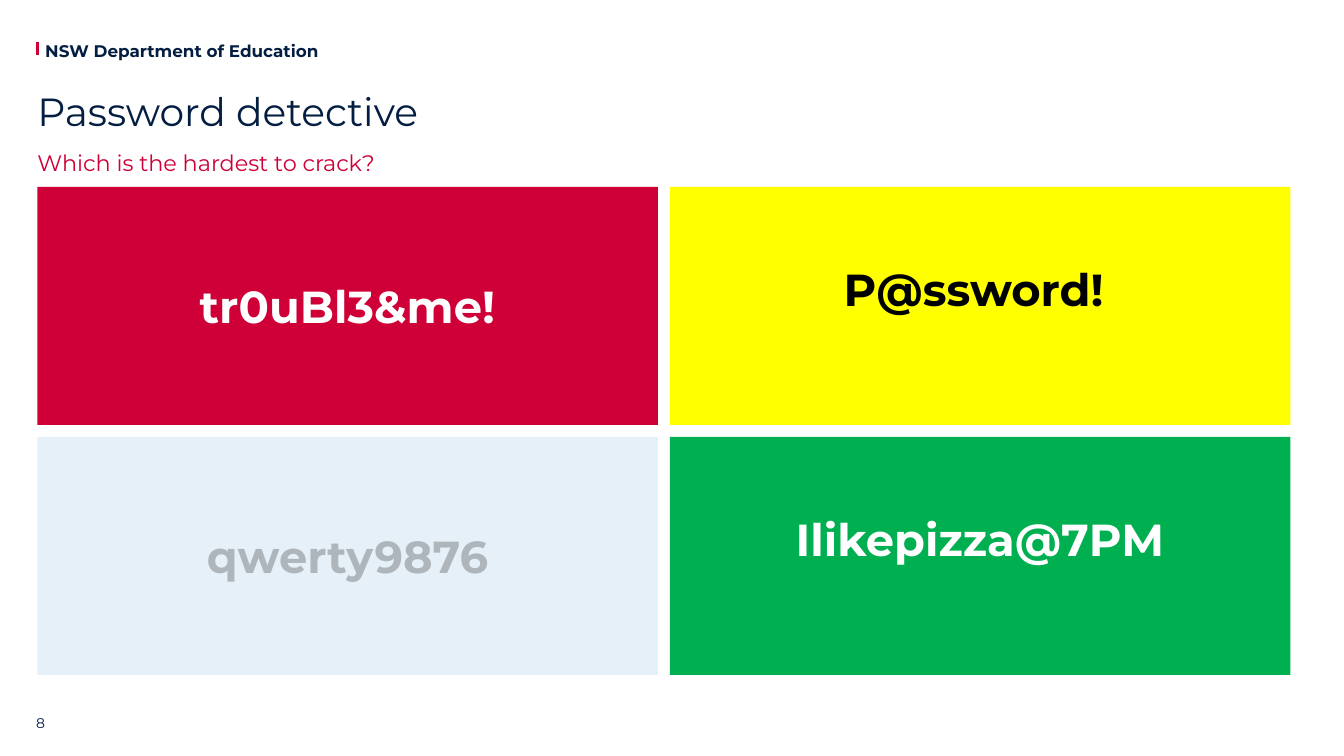
from lxml import etree
from pptx import Presentation
from pptx.dml.color import RGBColor
from pptx.enum.shapes import MSO_CONNECTOR, MSO_SHAPE
from pptx.enum.text import MSO_ANCHOR, PP_ALIGN
from pptx.oxml.ns import qn
from pptx.util import Cm, Pt

TOP, MIDDLE, BOTTOM = MSO_ANCHOR.TOP, MSO_ANCHOR.MIDDLE, MSO_ANCHOR.BOTTOM
CENTER = PP_ALIGN.CENTER
RECTANGLE, STRAIGHT = MSO_SHAPE.RECTANGLE, MSO_CONNECTOR.STRAIGHT

FONT = "Montserrat"
NAVY, RED, WHITE, BLACK = "041E42", "CE0037", "FFFFFF", "000000"
YELLOW, GREEN, BLUE = "FFFF00", "00B050", "0070C0"
LEFT = 0.94

# password, fill, fill opacity %, text colour, text opacity %, bottom inset in cm
PASSWORDS = [
    [("tr0uBl3&me!", RED, 100, WHITE, 100, 0.13),
     ("P@ssword! ", YELLOW, 100, BLACK, 100, 0.99)],
    [("qwerty9876", BLUE, 10, BLACK, 24, 0.13),
     ("Ilikepizza@7PM", GREEN, 100, WHITE, 100, 0.99)],
]


def rgb(color):
    return RGBColor.from_string(color)


def set_opacity(color_element, percent):
    if percent < 100:
        alpha = etree.SubElement(color_element, qn("a:alpha"))
        alpha.set("val", str(percent * 1000))


def write(tf, text, size, color, bold=False, anchor=TOP):
    """Fill a text frame with one paragraph and return that paragraph."""
    tf.margin_left = tf.margin_right = tf.margin_top = tf.margin_bottom = 0
    tf.vertical_anchor = anchor
    tf.text = text
    p = tf.paragraphs[0]
    font = p.runs[0].font
    font.name, font.size, font.bold = FONT, Pt(size), bold
    font.color.rgb = rgb(color)
    return p


def add_text(s, box, text, size, color, bold=False, anchor=TOP, wrap=True):
    tf = s.shapes.add_textbox(*map(Cm, box)).text_frame
    tf.word_wrap = wrap
    return write(tf, text, size, color, bold, anchor)


def add_department(s, left, top, width, height):
    x = Cm(left)
    bar = s.shapes.add_connector(STRAIGHT, x, Cm(top + 0.05), x, Cm(top + 0.36))
    bar.line.color.rgb = rgb(RED)
    bar.line.width = Pt(2.5)
    etree.SubElement(bar.element.spPr, qn("a:effectLst"))
    add_text(s, (left + 0.2, top, width - 0.2, height),
             "NSW Department of Education", 12, NAVY, bold=True, wrap=False)


def add_heading(s, left, top, width, height):
    p = add_text(s, (left, top, width, 1.4), "Password detective", 28, NAVY,
                 anchor=MIDDLE)
    p.line_spacing = 0.9
    p = add_text(s, (left, top + 1.27, width, height - 1.27),
                 "Which is the hardest to crack?", 16, RED)
    p.line_spacing = 1.5


def add_tile(s, box, text, fill, fill_opacity, color, text_opacity, inset):
    sp = s.shapes.add_shape(RECTANGLE, *map(Cm, box))
    sp.shadow.inherit = False
    sp.fill.solid()
    sp.fill.fore_color.rgb = rgb(fill)
    sp.line.fill.background()
    p = write(sp.text_frame, text, 32, color, bold=True, anchor=MIDDLE)
    p.alignment = CENTER
    sp.text_frame.margin_top = Cm(0.13)
    sp.text_frame.margin_bottom = Cm(inset)
    fill_color, text_color = sp.element.iter(qn("a:srgbClr"))
    set_opacity(fill_color, fill_opacity)
    set_opacity(text_color, text_opacity)


def add_password_grid(s, left, top, width, height, gap=0.3):
    w, h = (width - gap) / 2, (height - gap) / 2
    for i, row in enumerate(PASSWORDS):
        for j, tile in enumerate(row):
            box = (left + j * (w + gap), top + i * (h + gap), w, h)
            add_tile(s, box, *tile)


def main():
    prs = Presentation()
    prs.slide_width, prs.slide_height = Cm(33.87), Cm(19.05)
    s = prs.slides.add_slide(prs.slide_layouts[6])
    add_department(s, LEFT, 1.02, 7.16, 0.51)
    add_heading(s, LEFT, 2.16, 31.88, 2.64)
    add_password_grid(s, LEFT, 4.71, 31.58, 12.3)
    add_text(s, (0.91, 17.4, 1.14, 1.02), "8", 10, NAVY, anchor=BOTTOM)
    prs.save("out.pptx")


if __name__ == "__main__":
    main()
